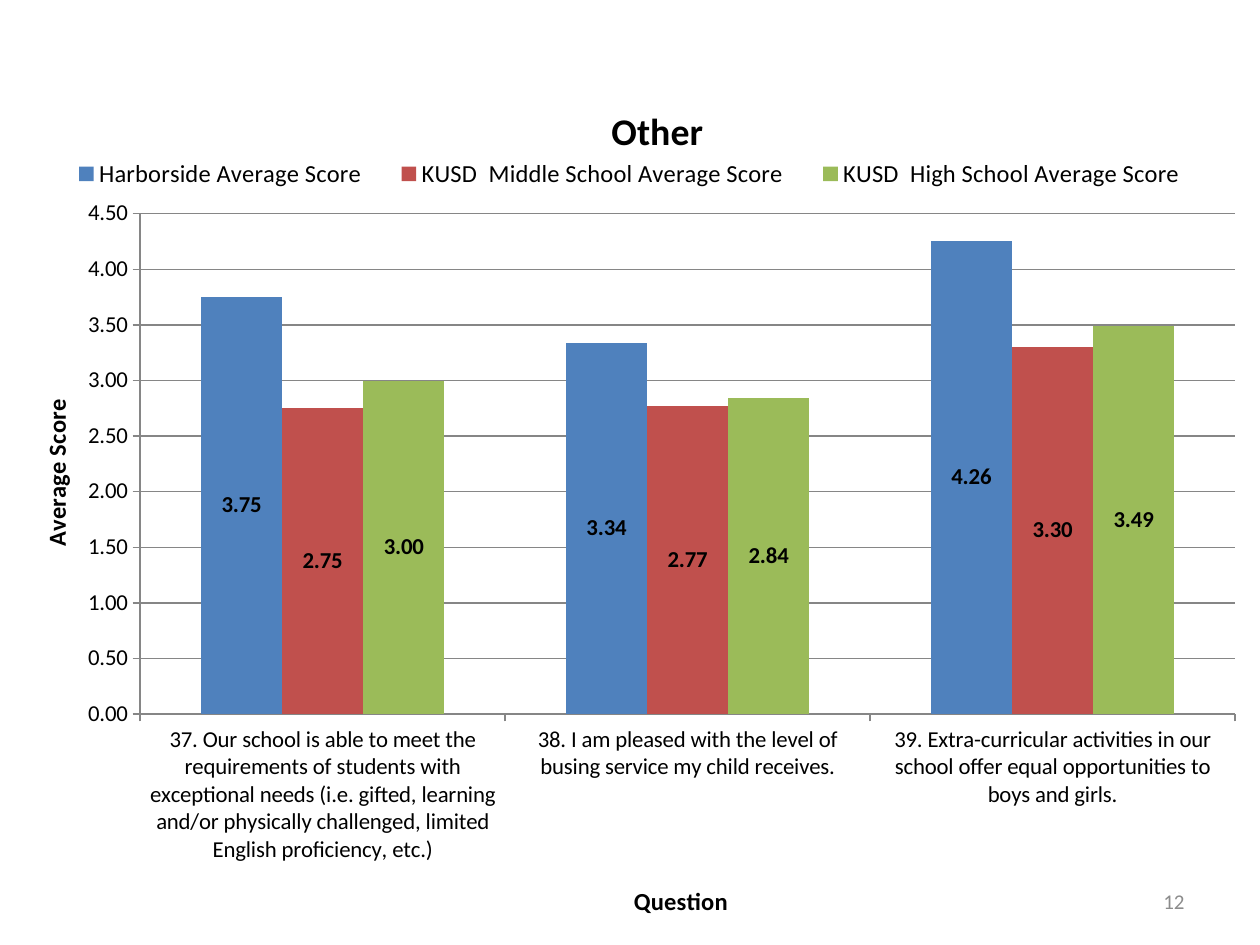
from lxml import etree
from pptx import Presentation
from pptx.chart.data import CategoryChartData
from pptx.dml.color import RGBColor
from pptx.enum.chart import XL_CHART_TYPE, XL_LABEL_POSITION, XL_LEGEND_POSITION, XL_TICK_MARK
from pptx.enum.text import MSO_ANCHOR, PP_ALIGN
from pptx.oxml.ns import qn
from pptx.util import Inches, Pt

COLUMNS = XL_CHART_TYPE.COLUMN_CLUSTERED
CENTER = XL_LABEL_POSITION.CENTER
TOP = XL_LEGEND_POSITION.TOP
OUTSIDE = XL_TICK_MARK.OUTSIDE
MIDDLE = MSO_ANCHOR.MIDDLE
RIGHT = PP_ALIGN.RIGHT

BLACK = RGBColor(0x00, 0x00, 0x00)
GRAY = RGBColor(0x8C, 0x8C, 0x8C)
LINE_GRAY = RGBColor(0x86, 0x86, 0x86)
BLUE = RGBColor(0x4F, 0x81, 0xBD)
RED = RGBColor(0xC0, 0x50, 0x4D)
GREEN = RGBColor(0x9B, 0xBB, 0x59)

FONT = "Calibri"
SCORE_FORMAT = "0.00"
QUESTIONS = [
    "37. Our school is able to meet the requirements of students with exceptional needs "
    "(i.e. gifted, learning and/or physically challenged, limited English proficiency, etc.)",
    "38. I am pleased with the level of busing service my child receives.",
    "39. Extra-curricular activities in our school offer equal opportunities to boys and girls.",
]
SCORES = [
    ("Harborside Average Score", (3.75, 3.34, 4.26), BLUE),
    ("KUSD  Middle School Average Score", (2.75, 2.77, 3.30), RED),
    ("KUSD  High School Average Score", (3.00, 2.84, 3.49), GREEN),
]


def style_font(font, size, color=BLACK, bold=False):
    """Set the typeface, size, colour and weight of a font."""
    font.name = FONT
    font.size = Pt(size)
    font.bold = bold
    font.color.rgb = color


def place_part(part, after, **fractions):
    """Give a chart part a manual layout, in fractions of the chart."""
    for old in part.findall(qn("c:layout")):
        part.remove(old)
    layout = etree.Element(qn("c:layout"))
    manual = etree.SubElement(layout, qn("c:manualLayout"))
    if after is None:
        etree.SubElement(manual, qn("c:layoutTarget")).set("val", "inner")
        part.insert(0, layout)
    else:
        part.find(qn(after)).addnext(layout)
    for side in ("x", "y"):
        etree.SubElement(manual, qn(f"c:{side}Mode")).set("val", "edge")
    for name, fraction in fractions.items():
        etree.SubElement(manual, qn(f"c:{name}")).set("val", str(fraction))


def write_title(title, text, size, x, y):
    """Write a bold chart or axis title and place it."""
    title.text_frame.text = text
    style_font(title.text_frame.paragraphs[0].runs[0].font, size, bold=True)
    place_part(title._element, "c:tx", x=x, y=y)


def style_axis(axis, text, x, y):
    """Format an axis with its title, ticks and labels."""
    write_title(axis.axis_title, text, 14, x, y)
    axis.major_tick_mark = OUTSIDE
    axis.format.line.color.rgb = LINE_GRAY
    style_font(axis.tick_labels.font, 13)


def style_series(series, color):
    """Colour one series and label its columns."""
    series.format.fill.solid()
    series.format.fill.fore_color.rgb = color
    series.invert_if_negative = False
    labels = series.data_labels
    labels.show_value = True
    labels.position = CENTER
    labels.number_format = SCORE_FORMAT
    labels.number_format_is_linked = False
    style_font(labels.font, 13, bold=True)


def add_score_chart(page, left, top, width, height):
    """Add the column chart of average scores by question."""
    data = CategoryChartData(number_format=SCORE_FORMAT)
    data.categories = QUESTIONS
    for name, values, _ in SCORES:
        data.add_series(name, values)
    chart = page.shapes.add_chart(COLUMNS, left, top, width, height, data).chart
    style_font(chart.font, 10)
    chart.has_title = True
    write_title(chart.chart_title, "Other", 21.6, 0.48, 0.03)

    chart.has_legend = True
    chart.legend.position = TOP
    chart.legend.include_in_layout = False
    style_font(chart.legend.font, 14)
    place_part(chart.legend._element, "c:legendPos", x=0.03, y=0.09, w=0.94, h=0.06)

    style_axis(chart.category_axis, "Question", 0.5, 0.95)
    scale = chart.value_axis
    style_axis(scale, "Average Score", 0.02, 0.38)
    scale.minimum_scale, scale.maximum_scale, scale.major_unit = 0, 4.5, 0.5
    scale.tick_labels.number_format = SCORE_FORMAT
    scale.tick_labels.number_format_is_linked = False
    scale.major_gridlines.format.line.color.rgb = LINE_GRAY

    plot = chart.plots[0]
    plot.gap_width = 150
    plot.overlap = 0
    plot.vary_by_categories = False
    for series, (_, _, color) in zip(plot.series, SCORES):
        style_series(series, color)
    plot_area = chart._chartSpace.chart.plotArea
    place_part(plot_area, None, x=0.105, y=0.167, w=0.884, h=0.588)


def add_page_number(page, left, top, width, height):
    """Add the page number, right-aligned in its box."""
    frame = page.shapes.add_textbox(left, top, width, height).text_frame
    frame.word_wrap = True
    frame.vertical_anchor = MIDDLE
    frame.text = "12"
    para = frame.paragraphs[0]
    para.alignment = RIGHT
    style_font(para.runs[0].font, 12, GRAY)


def main():
    """Build the slide and save it."""
    deck = Presentation()
    deck.slide_width, deck.slide_height = Inches(10), Inches(7.5)
    page = deck.slides.add_slide(deck.slide_layouts[6])
    add_score_chart(page, Inches(0.08), Inches(0.57), Inches(9.83), Inches(6.77))
    add_page_number(page, Inches(7.17), Inches(6.95), Inches(2.33), Inches(0.4))
    deck.save("out.pptx")


if __name__ == "__main__":
    main()
